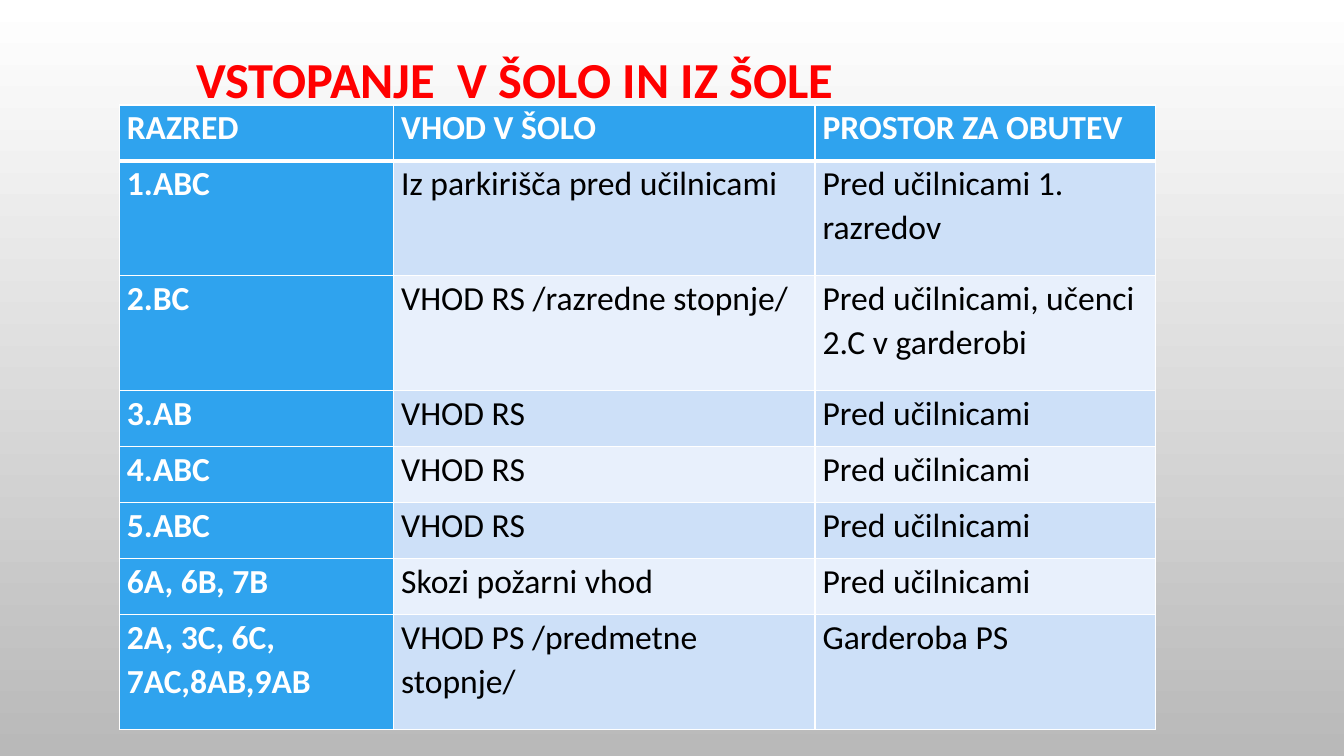
from lxml import etree
from pptx import Presentation
from pptx.dml.color import RGBColor
from pptx.enum import text
from pptx.oxml import ns
from pptx.util import Pt

COLORS = {
    "red": "FF0000",
    "white": "FFFFFF",
    "black": "000000",
    "gray": "B9B9B9",
    "blue": "2FA3EE",
    "odd band": "CDE0F8",
    "even band": "E8F0FC",
}
ENTRANCES = [
    ("RAZRED", "VHOD V ŠOLO", "PROSTOR ZA OBUTEV"),
    ("1.ABC", "Iz parkirišča pred učilnicami", "Pred učilnicami 1. razredov"),
    ("2.BC", "VHOD RS /razredne stopnje/", "Pred učilnicami, učenci 2.C v garderobi"),
    ("3.AB", "VHOD RS", "Pred učilnicami"),
    ("4.ABC", "VHOD RS", "Pred učilnicami"),
    ("5.ABC", "VHOD RS", "Pred učilnicami"),
    ("6A, 6B, 7B", "Skozi požarni vhod", "Pred učilnicami"),
    ("2A, 3C, 6C, 7AC,8AB,9AB", "VHOD PS /predmetne stopnje/", "Garderoba PS"),
]
COLUMN_WIDTHS = [196, 301, 243]
SINGLE_ROW, DOUBLE_ROW = 40, 82
DOUBLE_ROWS = {1, 2, 7}


def write(frame, wording, *, size, color, bold, spacing):
    para = frame.paragraphs[0]
    para.alignment = text.PP_ALIGN.LEFT
    para.line_spacing = spacing
    span = para.add_run()
    span.text = wording
    span.font.name = "Calibri"
    span.font.size = Pt(size)
    span.font.bold = bold
    span.font.color.rgb = RGBColor.from_string(COLORS[color])


def add_border(cell, side, width):
    line = etree.SubElement(cell._tc.get_or_add_tcPr(), ns.qn(f"a:ln{side}"), w=str(Pt(width)))
    fill = etree.SubElement(line, ns.qn("a:solidFill"))
    etree.SubElement(fill, ns.qn("a:srgbClr"), val=COLORS["white"])


deck = Presentation()
deck.slide_width, deck.slide_height = Pt(960), Pt(540)
page = deck.slides.add_slide(deck.slide_layouts[5])

backdrop = page.background.fill
backdrop.gradient()
backdrop.gradient_angle = 270
for stop, color in zip(backdrop.gradient_stops, ("white", "gray")):
    stop.color.rgb = RGBColor.from_string(COLORS[color])

title = page.shapes.title
title.left, title.top, title.width, title.height = Pt(133), Pt(14.4), Pt(816), Pt(89.3)
title.text_frame.vertical_anchor = text.MSO_ANCHOR.MIDDLE
title.text_frame.word_wrap = True
write(title.text_frame, "VSTOPANJE  V ŠOLO IN IZ ŠOLE", size=36, color="red", bold=True, spacing=0.9)

heights = [DOUBLE_ROW if row in DOUBLE_ROWS else SINGLE_ROW for row in range(len(ENTRANCES))]
table = page.shapes.add_table(
    len(ENTRANCES), len(COLUMN_WIDTHS), Pt(85.2), Pt(75), Pt(sum(COLUMN_WIDTHS)), Pt(sum(heights))
).table
for column, width in zip(table.columns, COLUMN_WIDTHS):
    column.width = Pt(width)

for row, entrance in enumerate(ENTRANCES):
    table.rows[row].height = Pt(heights[row])
    for column, wording in enumerate(entrance):
        cell = table.cell(row, column)
        cell.margin_left = cell.margin_right = Pt(5.4)
        cell.margin_top = cell.margin_bottom = 0
        heading = row == 0 or column == 0
        write(cell.text_frame, wording, size=24, color="white" if heading else "black",
              bold=heading, spacing=1.07)
        for side in "LRTB":
            add_border(cell, side, 3 if (row, side) in {(0, "B"), (1, "T")} else 1)
        band = "blue" if heading else "odd band" if row % 2 else "even band"
        cell.fill.solid()
        cell.fill.fore_color.rgb = RGBColor.from_string(COLORS[band])

deck.save("out.pptx")
